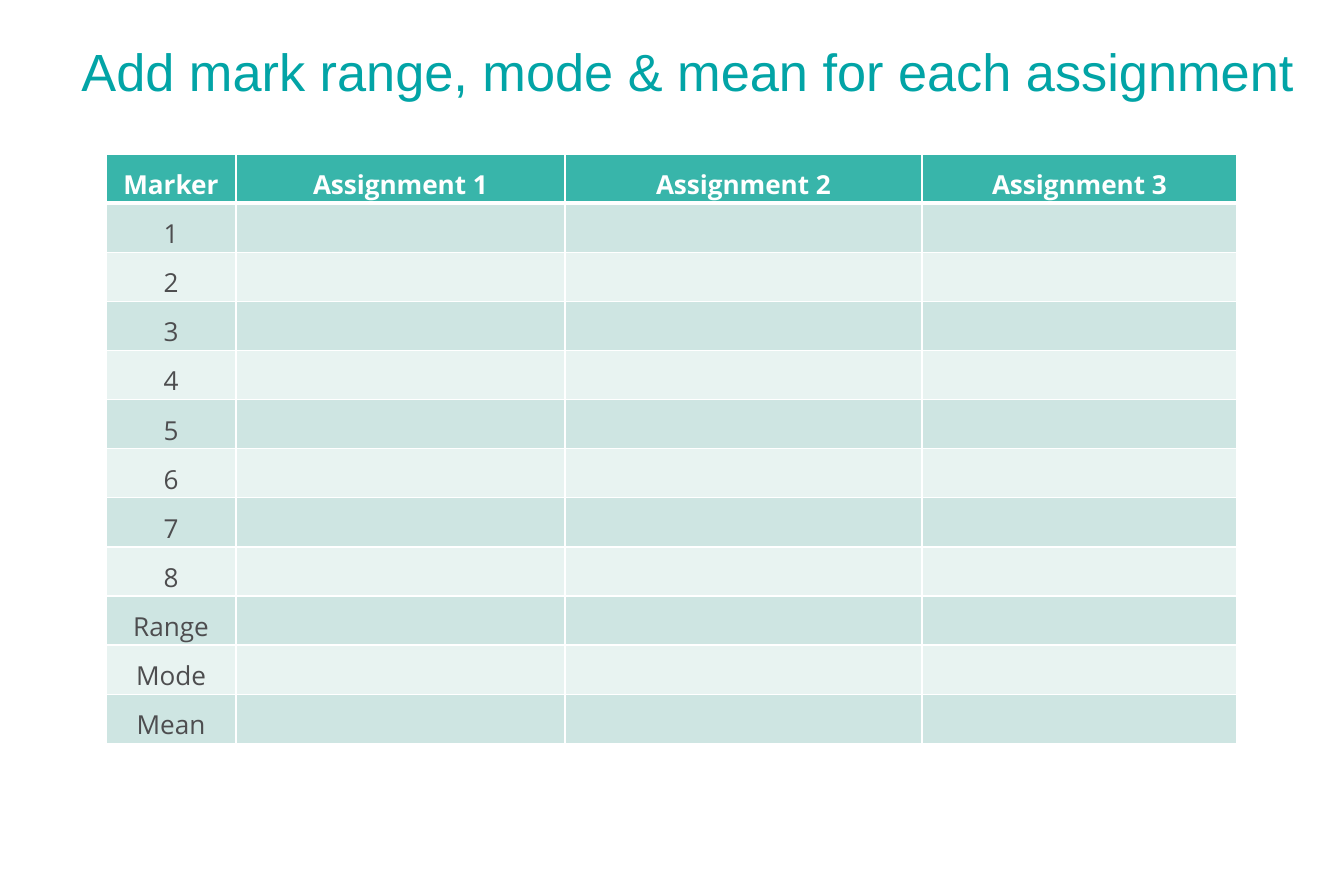
from lxml import etree
from pptx import Presentation
from pptx.dml.color import RGBColor
from pptx.enum.text import MSO_ANCHOR, PP_ALIGN
from pptx.oxml.ns import qn
from pptx.util import Pt

PX = 7769  # EMU per pixel
WHITE, TEAL, HEADER, GREY = "FFFFFF", "02A4A6", "38B5AA", "4D4D4F"
BANDS = ["E8F3F1", "CEE5E2"]


def write(frame, text, *, size, font, color, bold=False, spacing=None):
    paragraph = frame.paragraphs[0]
    paragraph.alignment = PP_ALIGN.CENTER
    paragraph.line_spacing = spacing
    run = paragraph.add_run()
    run.text = text
    run.font.size = Pt(size)
    run.font.name = font
    run.font.bold = bold
    run.font.color.rgb = RGBColor.from_string(color)


def add_borders(cell, widths):
    """Draw white cell borders; widths maps each side (L, R, T, B) to points."""
    properties = cell._tc.get_or_add_tcPr()
    for position, (side, width) in enumerate(widths.items()):
        line = etree.Element(qn(f"a:ln{side}"), w=str(Pt(width)))
        fill = etree.SubElement(line, qn("a:solidFill"))
        etree.SubElement(fill, qn("a:srgbClr"), val=WHITE)
        properties.insert(position, line)


deck = Presentation()
deck.slide_width, deck.slide_height = 1344 * PX, 883 * PX
slide = deck.slides.add_slide(deck.slide_layouts[6])

title = slide.shapes.add_textbox(33 * PX, 33 * PX, 1311 * PX, 75 * PX)
title.fill.solid()
title.fill.fore_color.rgb = RGBColor.from_string(WHITE)
title.text_frame.word_wrap = True
title.text_frame.vertical_anchor = MSO_ANCHOR.TOP
write(title.text_frame, "Add mark range, mode & mean for each assignment",
      size=32, font="Arial", color=TEAL)

headings = ["Marker", "Assignment 1", "Assignment 2", "Assignment 3"]
markers = ["1", "2", "3", "4", "5", "6", "7", "8", "Range", "Mode", "Mean"]
column_widths = [130, 329, 357, 315]
table_height = 583 * PX
rows = [headings] + [[marker, "", "", ""] for marker in markers]

marks = slide.shapes.add_table(len(rows), len(headings), 106 * PX, 154 * PX,
                               sum(column_widths) * PX, table_height).table
for column, width in zip(marks.columns, column_widths):
    column.width = width * PX
for r, texts in enumerate(rows):
    marks.rows[r].height = table_height // len(rows)
    is_header = r == 0
    for c, text in enumerate(texts):
        cell = marks.cell(r, c)
        cell.fill.solid()
        cell.fill.fore_color.rgb = RGBColor.from_string(HEADER if is_header else BANDS[r % 2])
        add_borders(cell, {"L": 1, "R": 1, "T": 3 if r == 1 else 1, "B": 3 if is_header else 1})
        if text:
            write(cell.text_frame, text, size=16, font="Open Sans", bold=is_header,
                  color=WHITE if is_header else GREY, spacing=1.19)

deck.save("out.pptx")
